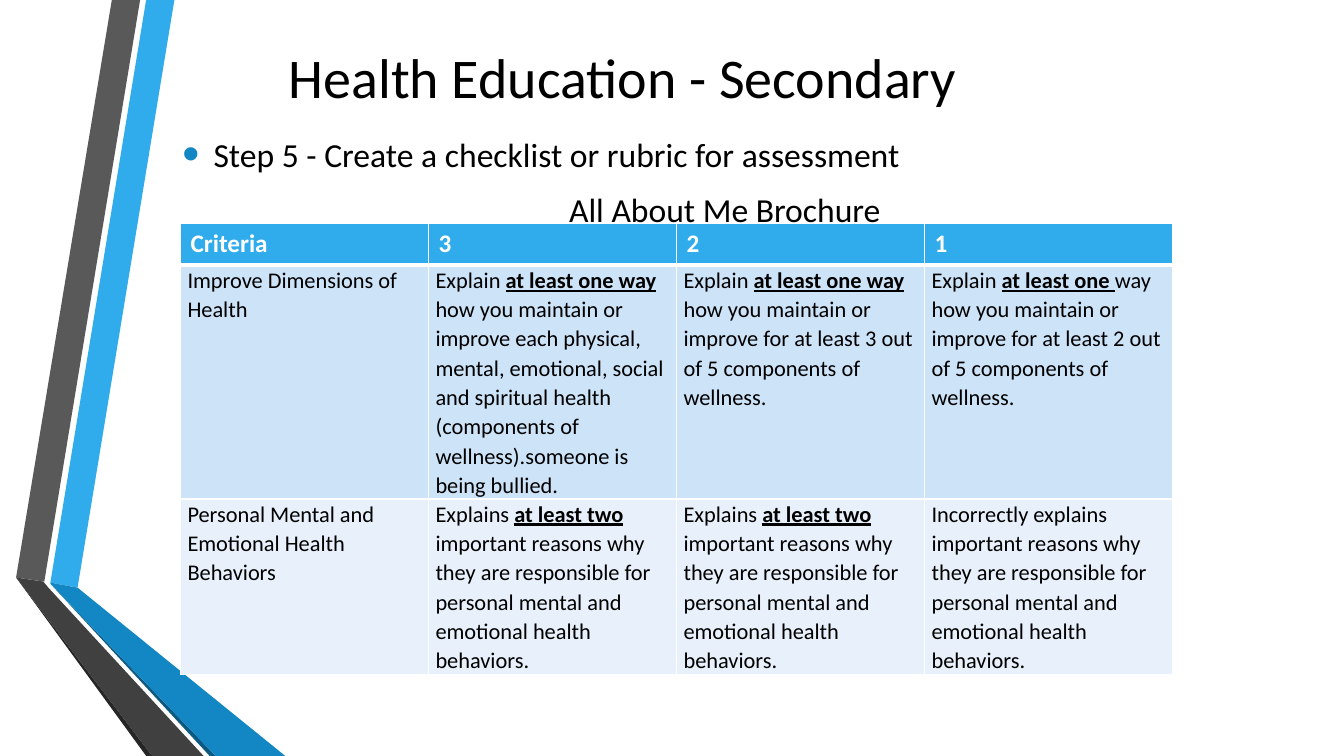
from lxml import etree
from pptx import Presentation
from pptx.dml.color import RGBColor
from pptx.enum.text import MSO_ANCHOR as Anchor, PP_ALIGN as Align
from pptx.oxml.ns import qn
from pptx.util import Inches, Pt

BARS = [
    ("30ACEC", [(0.5, 5.78), (0.77, 5.83), (1.73, 0), (1.45, 0)]),
    ("595959", [(1.39, 0), (1.11, 0), (0.16, 5.73), (0.44, 5.77)]),
    ("262626", [(0.16, 5.73), (1.45, 7.5), (1.51, 7.5)]),
    ("0C5A82", [(0.5, 5.79), (2.08, 7.5), (2.14, 7.5)]),
    ("1287C3", [(0.5, 5.79), (2.14, 7.5), (2.83, 7.5), (0.77, 5.83), (0.5, 5.78)]),
    ("404040", [(2.02, 7.5), (0.48, 5.83), (0.43, 5.77), (0.16, 5.73), (1.51, 7.5)]),
]
REASONS = ("important reasons why they are responsible for personal mental "
           "and emotional health behaviors.")
# Words between asterisks are bold and underlined.
RUBRIC = [
    ["Criteria", "3", "2", "1"],
    ["Improve Dimensions of Health",
     "Explain *at least one way* how you maintain or improve each physical, mental, "
     "emotional, social and spiritual health (components of wellness).someone is "
     "being bullied.",
     "Explain *at least one way *how you maintain or improve for at least 3 out of 5 "
     "components of wellness.",
     "Explain *at least one *way how you maintain or improve for at least 2 out of 5 "
     "components of wellness."],
    ["Personal Mental and Emotional Health Behaviors",
     f"Explains *at least two* {REASONS}",
     f"Explains *at least two* {REASONS}",
     f"Incorrectly explains {REASONS}"],
]
FILLS = ["30ACEC", "CDE3F8", "E8F1FB"]
HEIGHTS = [0.41, 2.32, 1.74]


def color(code):
    return RGBColor.from_string(code)


def style(item, **values):
    for name, value in values.items():
        setattr(item, name, value)


def write(para, text, size, code="000000", bold=False):
    for i, part in enumerate(text.split("*")):
        if part:
            run = para.add_run()
            run.text = part
            mark = i % 2 == 1
            style(run.font, name="Calibri", size=Pt(size), bold=bold or mark,
                  underline=mark)
            run.font.color.rgb = color(code)


def bars(slide):
    for code, points in BARS:
        spots = [(Inches(x), Inches(y)) for x, y in points]
        pen = slide.shapes.build_freeform(*spots[0])
        pen.add_line_segments(spots[1:], close=True)
        bar = pen.convert_to_shape()
        bar.shadow.inherit = False
        bar.fill.solid()
        bar.fill.fore_color.rgb = color(code)
        bar.line.fill.background()


def frame(slide, box, anchor):
    text = slide.shapes.add_textbox(*map(Inches, box)).text_frame
    style(text, word_wrap=True, vertical_anchor=anchor)
    return text


def title(slide, box):
    para = frame(slide, box, Anchor.MIDDLE).paragraphs[0]
    para.alignment = Align.CENTER
    write(para, "Health Education - Secondary", 40)


def bullet(para):
    props = para._p.get_or_add_pPr()
    style_in = Inches(0.31)
    props.set("marL", str(style_in))
    props.set("indent", str(-style_in))
    tint = etree.SubElement(props, qn("a:buClr"))
    etree.SubElement(tint, qn("a:srgbClr"), val="1287C3")
    etree.SubElement(props, qn("a:buSzPct"), val="145000")
    etree.SubElement(props, qn("a:buFont"), typeface="Arial")
    etree.SubElement(props, qn("a:buChar"), char="•")


def body(slide, box):
    text = frame(slide, box, Anchor.TOP)
    step = text.paragraphs[0]
    bullet(step)
    step.space_after = Pt(6)
    write(step, "Step 5 - Create a checklist or rubric for assessment", 24)
    name = text.add_paragraph()
    style(name, alignment=Align.CENTER, space_before=Pt(4.8))
    write(name, "All About Me Brochure", 24)


def border(cell, head):
    props = cell._tc.get_or_add_tcPr()
    for side in "LRTB":
        width = 3 if head and side == "B" else 1
        line = etree.SubElement(props, qn(f"a:ln{side}"), w=str(Pt(width)))
        fill = etree.SubElement(line, qn("a:solidFill"))
        etree.SubElement(fill, qn("a:srgbClr"), val="FFFFFF")


def rubric(slide, left, top, width):
    rows, cols = len(RUBRIC), len(RUBRIC[0])
    grid = slide.shapes.add_table(rows, cols, Inches(left), Inches(top),
                                  Inches(width), Inches(sum(HEIGHTS))).table
    for r, words in enumerate(RUBRIC):
        grid.rows[r].height = Inches(HEIGHTS[r])
        for c, text in enumerate(words):
            cell = grid.cell(r, c)
            border(cell, r == 0)
            cell.fill.solid()
            cell.fill.fore_color.rgb = color(FILLS[r])
            para = cell.text_frame.paragraphs[0]
            if r == 0:
                write(para, text, 18, "FFFFFF", True)
            else:
                style(cell, margin_left=Inches(0.07), margin_right=Inches(0.07),
                      margin_top=0, margin_bottom=0)
                para.line_spacing = 1.07
                write(para, text, 16)


def main():
    deck = Presentation()
    style(deck, slide_width=Inches(13.33), slide_height=Inches(7.5))
    slide = deck.slides.add_slide(deck.slide_layouts[6])
    bars(slide)
    title(slide, (1.71, 0.24, 8.93, 1.02))
    body(slide, (1.71, 1.28, 10.96, 1.44))
    rubric(slide, 1.79, 2.22, 9.84)
    deck.save("out.pptx")


if __name__ == "__main__":
    main()
